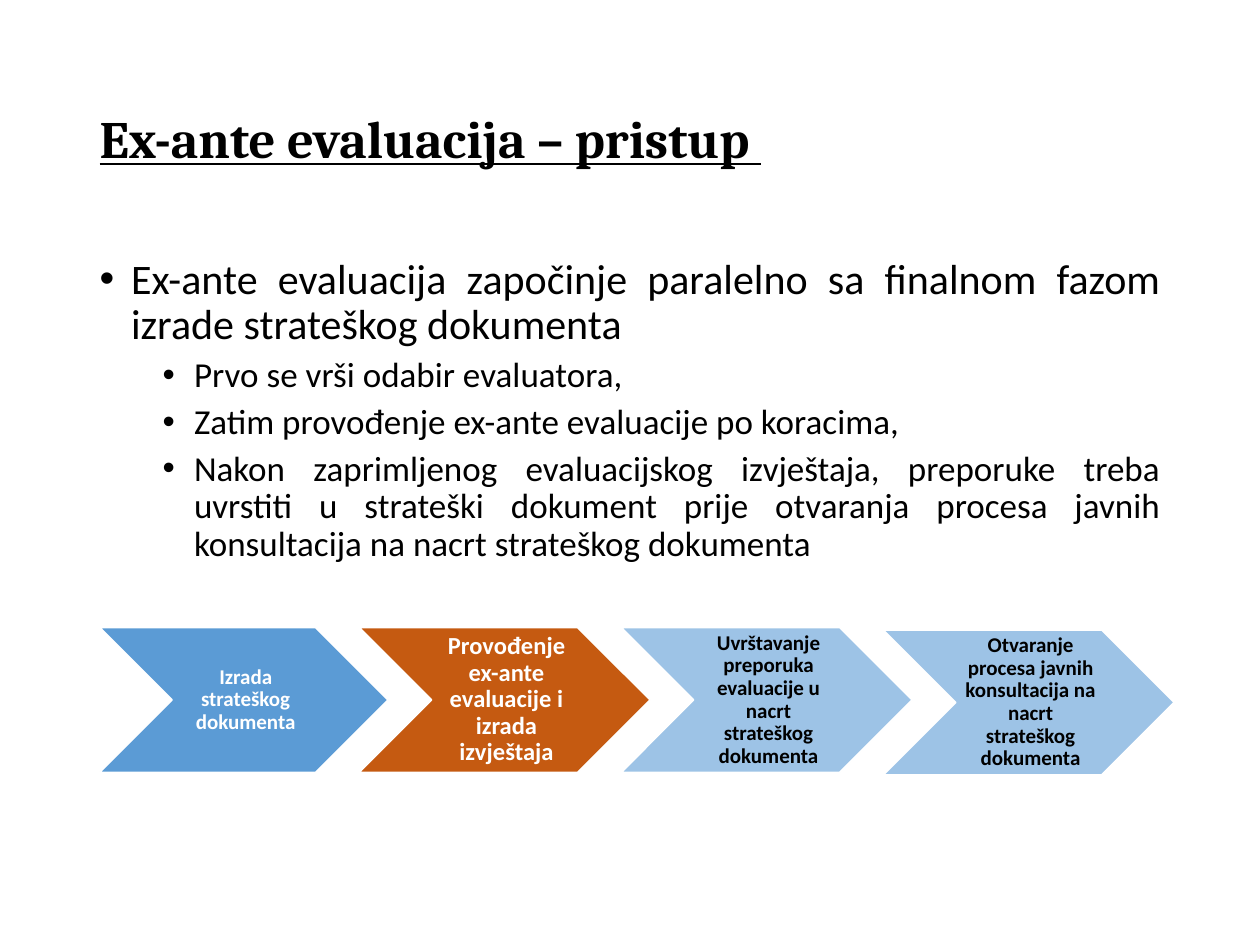
from lxml import etree
from pptx import Presentation
from pptx import util as u
from pptx.dml.color import RGBColor
from pptx.enum import shapes, text
from pptx.oxml.ns import qn

COLORS = {"black": "000000", "white": "FFFFFF", "blue": "5B9BD5",
          "orange": "C55A11", "light": "9DC3E6"}
BULLETS = [
    (0, "Ex-ante evaluacija započinje paralelno sa finalnom fazom izrade strateškog dokumenta"),
    (1, "Prvo se vrši odabir evaluatora,"),
    (1, "Zatim provođenje ex-ante evaluacije po koracima,"),
    (1, "Nakon zaprimljenog evaluacijskog izvještaja, preporuke treba uvrstiti u strateški "
        "dokument prije otvaranja procesa javnih konsultacija na nacrt strateškog dokumenta"),
]
STEPS = [
    ("Izrada strateškog dokumenta", "blue", "white", 12, 0.79, 4.98),
    ("Provođenje ex-ante evaluacije i izrada izvještaja", "orange", "white", 14, 2.85, 4.98),
    ("Uvrštavanje preporuka evaluacije u nacrt strateškog dokumenta",
     "light", "black", 12, 4.93, 4.98),
    ("Otvaranje procesa javnih konsultacija na nacrt strateškog dokumenta",
     "light", "black", 12, 7.01, 5),
]
PITCH, STEP_WIDTH, STEP_HEIGHT = 2.08, 2.31, 1.15


def rgb(name):
    return RGBColor.from_string(COLORS[name])


def write(paragraph, words, size, font="Calibri", color="black", bold=False,
          underline=False, align=text.PP_ALIGN.LEFT, before=0, after=0):
    paragraph.alignment = align
    paragraph.line_spacing = 0.9
    paragraph.space_before, paragraph.space_after = u.Pt(before), u.Pt(after)
    run = paragraph.add_run()
    run.text = words
    run.font.name, run.font.size = font, u.Pt(size)
    run.font.bold, run.font.underline = bold, underline
    run.font.color.rgb = rgb(color)


class Deck:
    """Holds the slide and the style of its elements."""

    def __init__(self):
        self.prs = Presentation()
        self.prs.slide_width, self.prs.slide_height = u.Inches(10), u.Inches(7.5)
        self.slide = self.prs.slides.add_slide(self.prs.slide_layouts[1])

    def place(self, holder, top, height, anchor):
        holder.left, holder.top = u.Inches(0.69), u.Inches(top)
        holder.width, holder.height = u.Inches(8.62), u.Inches(height)
        frame = holder.text_frame
        frame.vertical_anchor = anchor
        frame.auto_size = text.MSO_AUTO_SIZE.NONE
        return frame

    def title(self, words):
        frame = self.place(self.slide.shapes.title, 0.4, 1.45, text.MSO_ANCHOR.MIDDLE)
        write(frame.paragraphs[0], words, 30, font="Cambria", bold=True, underline=True)

    def bullets(self, items):
        frame = self.place(self.slide.placeholders[1], 2, 4.76, text.MSO_ANCHOR.TOP)
        for index, (level, words) in enumerate(items):
            item = frame.add_paragraph() if index else frame.paragraphs[0]
            item.level = level
            write(item, words, 20 if level else 24, align=text.PP_ALIGN.JUSTIFY,
                  before=5 if level else 10)
            props = item._p.get_or_add_pPr()
            props.set("marL", str(u.Inches(0.25 + 0.5 * level)))
            props.set("indent", str(u.Inches(-0.25)))
            etree.SubElement(props, qn("a:buFont")).set("typeface", "Arial")
            etree.SubElement(props, qn("a:buChar")).set("char", "•")

    def chevron(self, words, fill, color, size, left, top, width):
        step = self.slide.shapes.add_shape(
            shapes.MSO_SHAPE.CHEVRON, u.Inches(left), u.Inches(top),
            u.Inches(width), u.Inches(STEP_HEIGHT))
        step.shadow.inherit = False
        step.fill.solid()
        step.fill.fore_color.rgb = rgb(fill)
        step.line.color.rgb, step.line.width = rgb("white"), u.Pt(1)
        frame = step.text_frame
        frame.word_wrap = True
        frame.vertical_anchor = text.MSO_ANCHOR.MIDDLE
        frame.margin_left = u.Inches(0.05)
        frame.margin_right = frame.margin_top = frame.margin_bottom = u.Inches(0.02)
        write(frame.paragraphs[0], words, size, color=color, bold=True,
              align=text.PP_ALIGN.CENTER)


def main():
    deck = Deck()
    deck.title("Ex-ante evaluacija – pristup ")
    deck.bullets(BULLETS)
    last_right = STEPS[-1][4] + STEP_WIDTH
    for index, (*look, left, top) in enumerate(STEPS):
        right = last_right - PITCH * (len(STEPS) - 1 - index)
        deck.chevron(*look, left, top, right - left)
    deck.prs.save("out.pptx")


if __name__ == "__main__":
    main()
